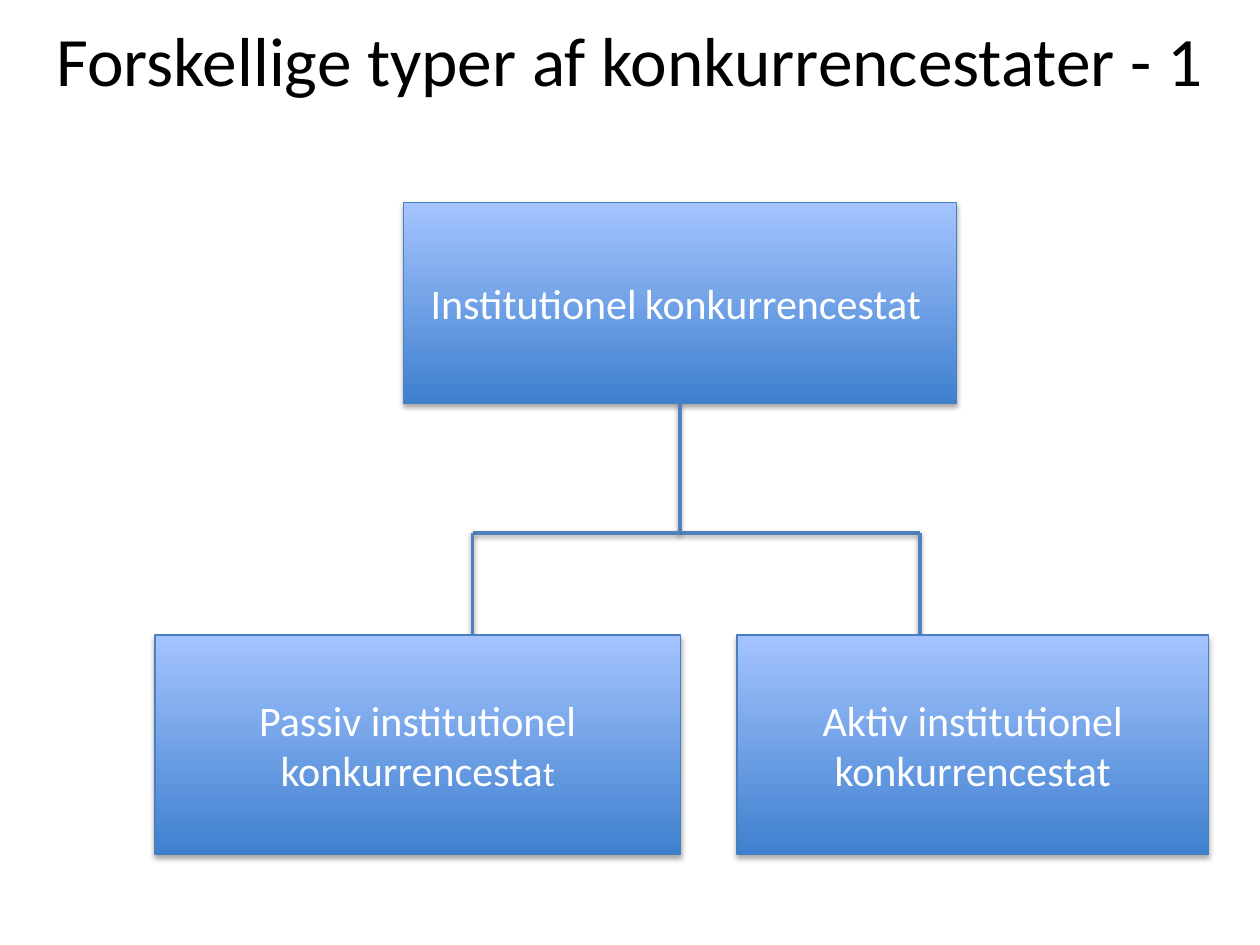
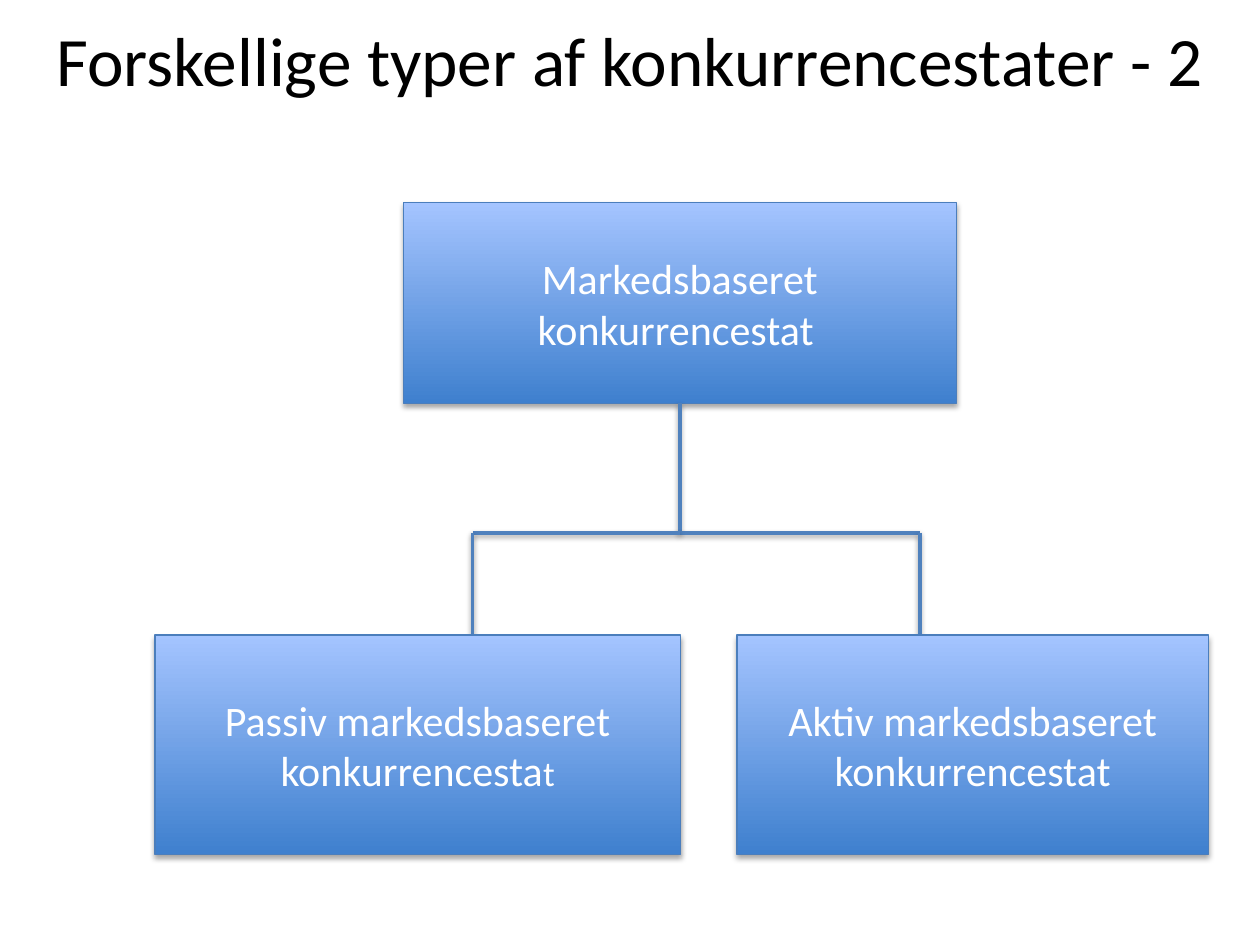
"""Two slides that split a type of competition state into a passive and an active form."""
from dataclasses import dataclass

import lxml.etree
import pptx
import pptx.dml.color
import pptx.enum.shapes
import pptx.enum.text
import pptx.oxml.ns
import pptx.util

RGB = pptx.dml.color.RGBColor
BLACK = RGB(0x00, 0x00, 0x00)
WHITE = RGB(0xFF, 0xFF, 0xFF)
BOX_BOTTOM = RGB(0x3F, 0x80, 0xCE)
BOX_TOP = RGB(0xA4, 0xC4, 0xFF)
BOX_EDGE = RGB(0x4B, 0x7E, 0xBC)
TREE_LINE = RGB(0x4F, 0x81, 0xBD)

FONT = "Calibri"
TITLE_SIZE, TEXT_SIZE, SMALL_SIZE = 39.6, 24, 20
WIDTH, HEIGHT = pptx.util.Inches(10), pptx.util.Inches(7.5)
COLS, ROWS = 100, 75

Run = tuple[str, float]
Point = tuple[float, float]


@dataclass(frozen=True)
class Area:
    """A rectangle in grid columns and rows."""
    col: float
    row: float
    cols: float
    rows: float

    def emu(self) -> tuple[int, int, int, int]:
        return x(self.col), y(self.row), x(self.cols), y(self.rows)


@dataclass(frozen=True)
class Tree:
    """The wording of one slide."""
    title: str
    root: list[Run]
    passive: list[Run]
    active: list[Run]


TITLE = Area(0, 0, COLS, 9.4)
ROOT = Area(32, 16.1, 43.9, 15.9)
PASSIVE = Area(12.3, 50.4, 41.7, 17.4)
ACTIVE = Area(58.5, 50.4, 37.4, 17.4)
STEM_COL = ROOT.col + ROOT.cols / 2
STEM_TOP = ROOT.row + ROOT.rows
BAR_ROW = 42.3
BRANCH_COLS = (73, 37.5)

TREES = [
    Tree("Forskellige typer af konkurrencestater - 1",
         [("Institutionel", TEXT_SIZE), (" ", SMALL_SIZE),
          ("konkurrencestat", TEXT_SIZE), (" ", SMALL_SIZE)],
         [("Passiv institutionel konkurrencesta", TEXT_SIZE), ("t", SMALL_SIZE)],
         [("Aktiv institutionel konkurrencestat", TEXT_SIZE)]),
    Tree("Forskellige typer af konkurrencestater - 2",
         [("Markedsbaseret konkurrencestat", TEXT_SIZE), (" ", SMALL_SIZE)],
         [("Passiv markedsbaseret konkurrencesta", TEXT_SIZE), ("t", SMALL_SIZE)],
         [("Aktiv markedsbaseret konkurrencestat", TEXT_SIZE)]),
]


def x(cols: float) -> int:
    return round(WIDTH * cols / COLS)


def y(rows: float) -> int:
    return round(HEIGHT * rows / ROWS)


def add_shadow(sp, opacity: int, distance: float) -> None:
    qn = pptx.oxml.ns.qn
    effects = lxml.etree.SubElement(sp._element.spPr, qn("a:effectLst"))
    shadow = lxml.etree.SubElement(
        effects, qn("a:outerShdw"), blurRad=str(pptx.util.Pt(3.1)),
        dist=str(pptx.util.Pt(distance)), dir="5400000", rotWithShape="0")
    color = lxml.etree.SubElement(shadow, qn("a:srgbClr"), val=str(BLACK))
    lxml.etree.SubElement(color, qn("a:alpha"), val=str(opacity * 1000))


def write(sp, runs: list[Run], color: RGB) -> None:
    tf = sp.text_frame
    tf.word_wrap = True
    tf.vertical_anchor = pptx.enum.text.MSO_ANCHOR.MIDDLE
    p = tf.paragraphs[0]
    p.alignment = pptx.enum.text.PP_ALIGN.CENTER
    for text, size in runs:
        r = p.add_run()
        r.text = text
        r.font.name = FONT
        r.font.size = pptx.util.Pt(size)
        r.font.color.rgb = color


def add_title(s, text: str) -> None:
    write(s.shapes.add_textbox(*TITLE.emu()), [(text, TITLE_SIZE)], BLACK)


def add_box(s, area: Area, runs: list[Run]) -> None:
    sp = s.shapes.add_shape(pptx.enum.shapes.MSO_SHAPE.RECTANGLE, *area.emu())
    sp.fill.gradient()
    sp.fill.gradient_angle = 90
    for stop, color in zip(sp.fill.gradient_stops, (BOX_BOTTOM, BOX_TOP)):
        stop.color.rgb = color
    sp.line.color.rgb = BOX_EDGE
    sp.line.width = pptx.util.Pt(0.75)
    add_shadow(sp, 35, 1.8)
    write(sp, runs, WHITE)


def add_line(s, start: Point, end: Point) -> None:
    line = s.shapes.add_connector(
        pptx.enum.shapes.MSO_CONNECTOR.STRAIGHT,
        x(start[0]), y(start[1]), x(end[0]), y(end[1]))
    line.line.color.rgb = TREE_LINE
    line.line.width = pptx.util.Pt(2)
    add_shadow(line, 38, 1.6)


def add_tree(prs, tree: Tree) -> None:
    s = prs.slides.add_slide(prs.slide_layouts[6])
    add_title(s, tree.title)
    add_box(s, ROOT, tree.root)
    fork = (STEM_COL, BAR_ROW)
    add_line(s, (STEM_COL, STEM_TOP), fork)
    for col in BRANCH_COLS:
        add_line(s, fork, (col, BAR_ROW))
        add_line(s, (col, BAR_ROW), (col, PASSIVE.row))
    add_box(s, PASSIVE, tree.passive)
    add_box(s, ACTIVE, tree.active)


def main() -> None:
    prs = pptx.Presentation()
    prs.slide_width, prs.slide_height = WIDTH, HEIGHT
    for tree in TREES:
        add_tree(prs, tree)
    prs.save("out.pptx")


if __name__ == "__main__":
    main()
